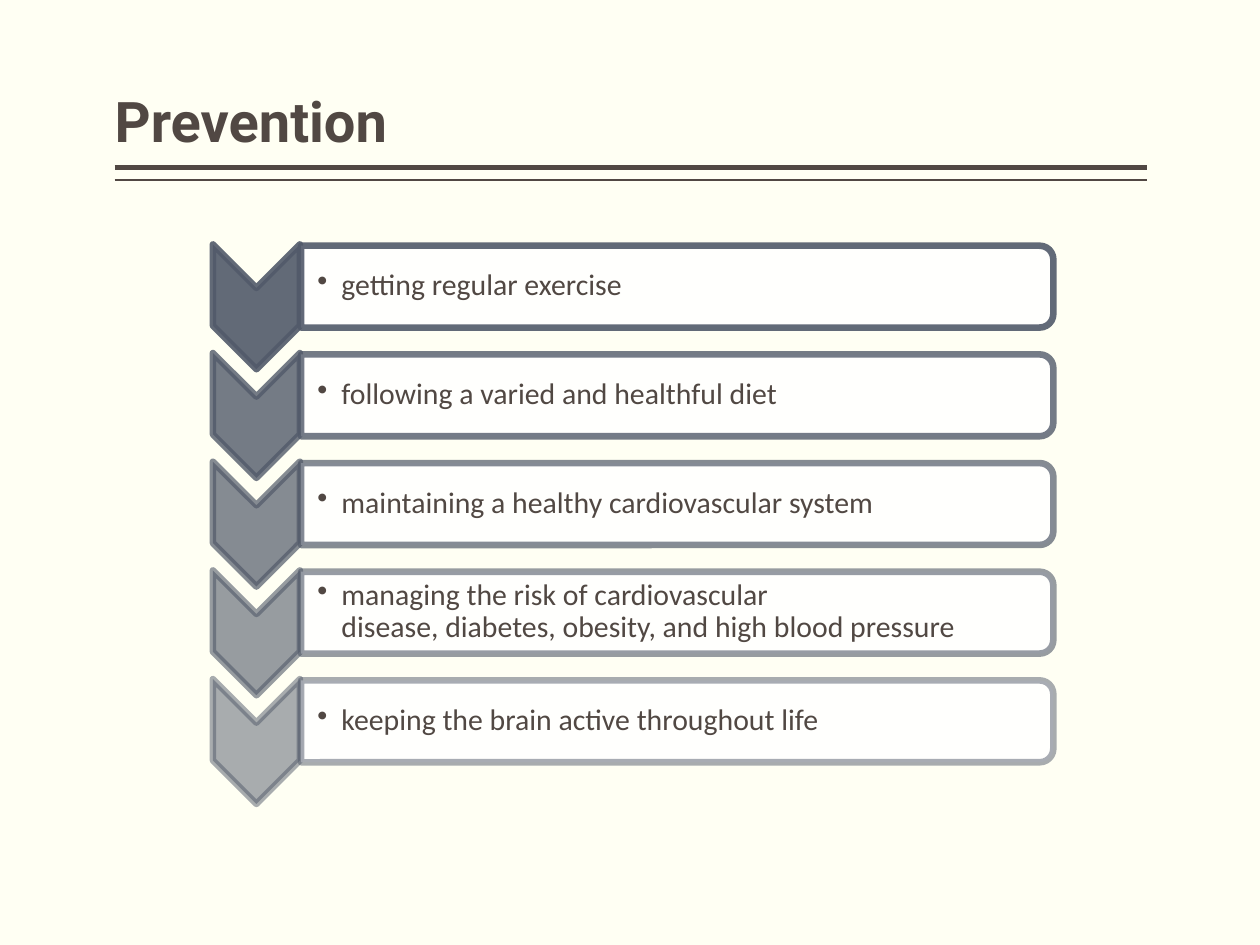
from lxml import etree
from pptx import Presentation
from pptx.dml.color import RGBColor
from pptx.enum.shapes import MSO_CONNECTOR, MSO_SHAPE
from pptx.enum.text import MSO_ANCHOR, PP_ALIGN
from pptx.oxml.ns import qn
from pptx.util import Inches, Pt

CHEVRON = MSO_SHAPE.CHEVRON
BAR = MSO_SHAPE.ROUND_2_SAME_RECTANGLE
STRAIGHT = MSO_CONNECTOR.STRAIGHT
BOTTOM, MIDDLE = MSO_ANCHOR.BOTTOM, MSO_ANCHOR.MIDDLE
LEFT = PP_ALIGN.LEFT

COLORS = {"background": "FFFFF3", "brown": "514843", "slate": "525A6A", "white": "FFFFFF"}
MEASURES = [
    "getting regular exercise",
    "following a varied and healthful diet",
    "maintaining a healthy cardiovascular system",
    "managing the risk of cardiovascular disease,\u00a0diabetes,\u00a0obesity, and\u00a0high blood pressure",
    "keeping the brain active throughout life",
]
PITCH = 3.45 / (len(MEASURES) - 1)


def rgb(name):
    """Return a palette colour."""
    return RGBColor.from_string(COLORS[name])


def paint(fill, color, opacity):
    """Apply a solid fill with an opacity in percent."""
    fill.solid()
    fill.fore_color.rgb = rgb(color)
    clr = fill._xPr.find(qn("a:solidFill"))[0]
    etree.SubElement(clr, qn("a:alpha")).set("val", str(opacity * 1000))


def set_frame(tf, anchor, margins):
    """Set wrapping, anchor and left, top, right, bottom margins."""
    tf.word_wrap = True
    tf.vertical_anchor = anchor
    tf.margin_left, tf.margin_top, tf.margin_right, tf.margin_bottom = map(Inches, margins)


def style_paragraph(p, font, size, bold=False):
    """Format a left-aligned brown paragraph."""
    p.alignment = LEFT
    p.line_spacing = 0.9
    p.font.name, p.font.size, p.font.bold = font, Pt(size), bold
    p.font.color.rgb = rgb("brown")


def add_title(s, text):
    """Fill and place the title placeholder."""
    sp = s.shapes.title
    sp.left, sp.top, sp.width, sp.height = map(Inches, (0.91, 0.08, 8.19, 1.2))
    sp.text = text
    set_frame(sp.text_frame, BOTTOM, (0, 0.05, 0, 0.05))
    style_paragraph(sp.text_frame.paragraphs[0], "Roboto", 32, True)


def add_rule(s, y, width):
    """Draw a horizontal rule below the title."""
    line = s.shapes.add_connector(STRAIGHT, Inches(0.91), Inches(y), Inches(9.1), Inches(y))
    line.line.color.rgb = rgb("brown")
    line.line.width = Pt(width)
    etree.SubElement(line._element.spPr, qn("a:effectLst"))


def add_turned(s, kind, box, fill, fill_opacity, line_opacity):
    """Draw a shape turned a quarter clockwise."""
    sp = s.shapes.add_shape(kind, *map(Inches, box))
    sp.rotation = 90
    sp.shadow.inherit = False
    paint(sp.fill, fill, fill_opacity)
    sp.line.width = Pt(3.78)
    paint(sp.line.fill, "slate", line_opacity)


def add_bullet(s, y, text):
    """Write one bulleted line of text."""
    sp = s.shapes.add_textbox(Inches(2.39), Inches(y), Inches(5.94), Inches(0.58))
    set_frame(sp.text_frame, MIDDLE, (0.13, 0.01, 0.01, 0.01))
    p = sp.text_frame.paragraphs[0]
    p.text = text
    style_paragraph(p, "Calibri", 17)
    pPr = p._p.get_or_add_pPr()
    pPr.set("marL", str(Inches(0.19)))
    pPr.set("indent", str(-Inches(0.19)))
    bullet = etree.Element(qn("a:buChar"), char="•")
    pPr.find(qn("a:lnSpc")).addnext(bullet)


def add_measure(s, i, text):
    """Draw one step of the chevron list."""
    y, opacity = i * PITCH, 90 - 10 * i
    add_turned(s, CHEVRON, (1.54, 2.09 + y, 0.99, 0.69), "slate", opacity, opacity)
    add_turned(s, BAR, (5.05, -0.71 + y, 0.65, 5.97), "white", 90, opacity)
    add_bullet(s, 1.98 + y, text)


def main():
    """Build and save the slide."""
    prs = Presentation()
    prs.slide_width, prs.slide_height = Inches(10), Inches(7.5)
    s = prs.slides.add_slide(prs.slide_layouts[5])
    s.background.fill.solid()
    s.background.fill.fore_color.rgb = rgb("background")
    add_rule(s, 1.33, 3)
    add_rule(s, 1.43, 1)
    add_title(s, "Prevention")
    for i, text in enumerate(MEASURES):
        add_measure(s, i, text)
    prs.save("out.pptx")


main()
